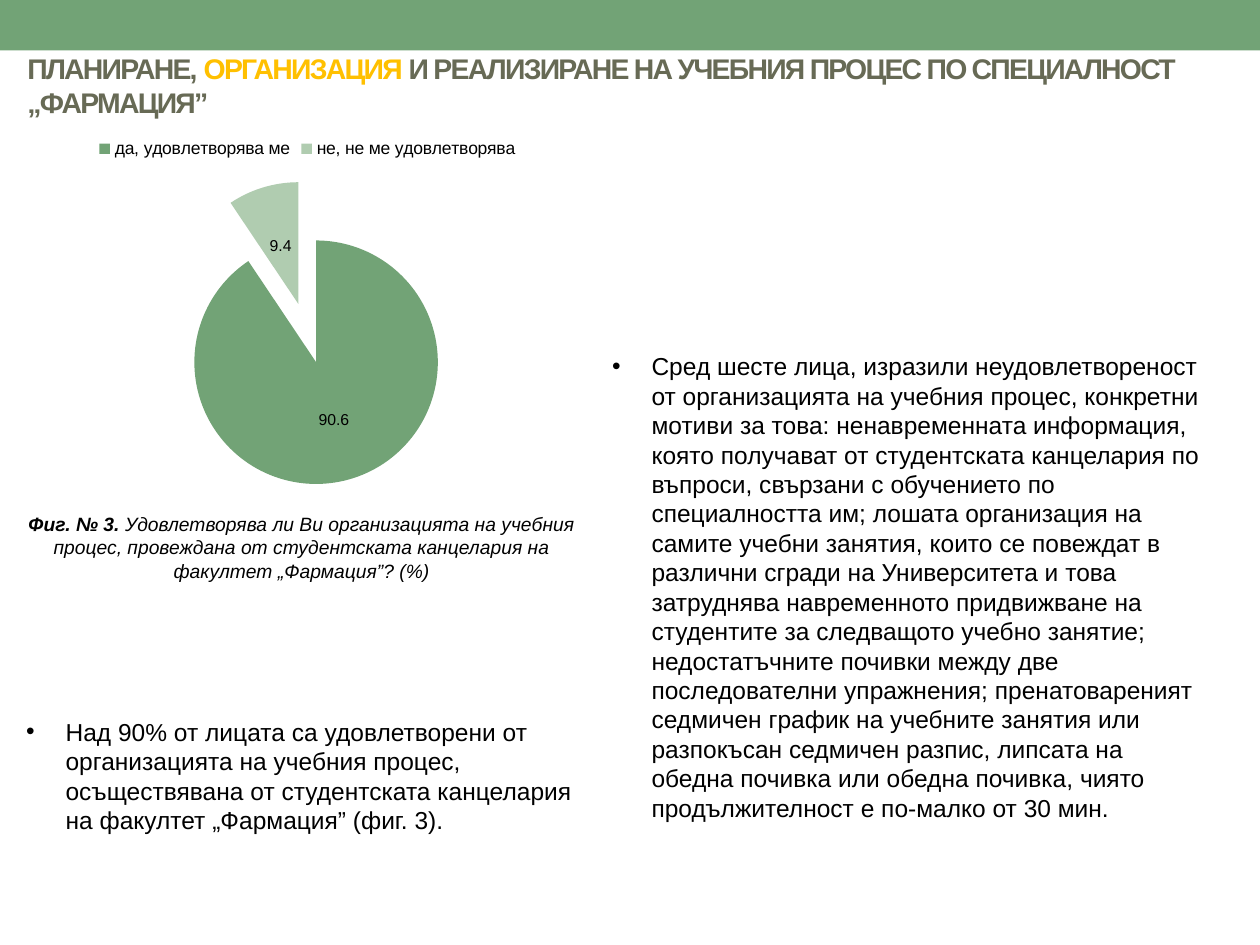
from dataclasses import dataclass

from lxml import etree
from pptx import Presentation
from pptx.chart.data import CategoryChartData
from pptx.dml.color import RGBColor
from pptx.enum.chart import XL_CHART_TYPE, XL_LABEL_POSITION, XL_LEGEND_POSITION
from pptx.enum.shapes import MSO_SHAPE
from pptx.enum.text import MSO_ANCHOR, PP_ALIGN
from pptx.oxml.ns import qn
from pptx.util import Pt

PIE = XL_CHART_TYPE.PIE
LABEL_CENTER = XL_LABEL_POSITION.CENTER
LEGEND_TOP = XL_LEGEND_POSITION.TOP
RECT = MSO_SHAPE.RECTANGLE
TOP, MIDDLE = MSO_ANCHOR.TOP, MSO_ANCHOR.MIDDLE
LEFT, CENTER = PP_ALIGN.LEFT, PP_ALIGN.CENTER


@dataclass(frozen=True)
class Theme:
    font: str = "Arial"
    green: str = "72A376"
    light_green: str = "B0CCB0"
    olive: str = "676A55"
    gold: str = "FFC000"
    black: str = "000000"
    title: float = 16.2
    body: float = 14
    caption: float = 11
    legend: float = 10
    label: float = 9


THEME = Theme()


def rgb(value):
    return RGBColor.from_string(value)


def style_font(font, size, color):
    font.name = THEME.font
    font.size = Pt(size)
    font.color.rgb = rgb(color)


def add_run(p, text, size=THEME.body, color=THEME.black, bold=False,
            italic=False, spacing=None):
    r = p.add_run()
    r.text = text
    style_font(r.font, size, color)
    r.font.bold = bold
    r.font.italic = italic
    if spacing is not None:
        r.font._element.set("spc", str(int(spacing * 100)))


class SlideBuilder:
    def __init__(self, slide, theme):
        self.s = slide
        self.theme = theme

    def bar(self, x, y, w, h, color):
        sp = self.s.shapes.add_shape(RECT, Pt(x), Pt(y), Pt(w), Pt(h))
        sp.shadow.inherit = False
        sp.fill.solid()
        sp.fill.fore_color.rgb = rgb(color)
        sp.line.fill.background()

    def text(self, x, y, w, h, runs, align=LEFT, anchor=TOP):
        """Add one paragraph; runs is a list of (text, format) pairs."""
        sp = self.s.shapes.add_textbox(Pt(x), Pt(y), Pt(w), Pt(h))
        tf = sp.text_frame
        tf.word_wrap = True
        tf.vertical_anchor = anchor
        p = tf.paragraphs[0]
        p.alignment = align
        for text, fmt in runs:
            add_run(p, text, **fmt)
        return p

    def bullet(self, x, y, w, h, text, indent=22.5):
        p = self.text(x, y, w, h, [(text, {})])
        pPr = p._p.get_or_add_pPr()
        pPr.set("marL", str(Pt(indent)))
        pPr.set("indent", str(-Pt(indent)))
        etree.SubElement(pPr, qn("a:buFont")).set("typeface", self.theme.font)
        etree.SubElement(pPr, qn("a:buChar")).set("char", "•")

    def pie(self, x, y, w, h, name, values, colors, explosion):
        data = CategoryChartData()
        data.categories = list(values)
        data.add_series(name, list(values.values()))
        chart = self.s.shapes.add_chart(
            PIE, Pt(x), Pt(y), Pt(w), Pt(h), data).chart
        style_font(chart.font, self.theme.legend, self.theme.black)
        chart.has_title = False
        chart.has_legend = True
        chart.legend.position = LEGEND_TOP
        chart.legend.include_in_layout = False
        style_font(chart.legend.font, self.theme.legend, self.theme.black)

        plot = chart.plots[0]
        plot.vary_by_categories = True
        series = plot.series[0]
        for i, color in enumerate(colors):
            fill = series.points[i].format.fill
            fill.solid()
            fill.fore_color.rgb = rgb(color)

        labels = series.data_labels
        labels.show_value = True
        labels.show_percentage = False
        labels.position = LABEL_CENTER
        style_font(labels.font, self.theme.label, self.theme.black)

        # Pull all slices away from the centre
        node = etree.Element(qn("c:explosion"), val=str(explosion))
        series._element.find(qn("c:dPt")).addprevious(node)


def main():
    prs = Presentation()
    prs.slide_width, prs.slide_height = Pt(720), Pt(540)
    t = THEME
    s = SlideBuilder(prs.slides.add_slide(prs.slide_layouts[6]), t)

    # Top band and title
    s.bar(0, 0, 720, 28.8, t.green)
    heading = dict(size=t.title, color=t.olive, bold=True, spacing=-1)
    s.text(8.6, 31.7, 697.7, 33.8, [
        ("ПЛАНИРАНЕ, ", heading),
        ("ОРГАНИЗАЦИЯ ", {**heading, "color": t.gold}),
        ("И РЕАЛИЗИРАНЕ НА УЧЕБНИЯ ПРОЦЕС ПО СПЕЦИАЛНОСТ „ФАРМАЦИЯ”", heading),
    ], anchor=MIDDLE)

    # Satisfaction chart with its caption
    s.pie(8.6, 71.3, 334, 216, "Удовлетвореност (%)",
          {"да, удовлетворява ме": 90.6, "не, не ме удовлетворява": 9.4},
          [t.green, t.light_green], explosion=25)
    caption = dict(size=t.caption, italic=True)
    s.text(8.6, 289.4, 327.6, 47.5, [
        ("Фиг. № 3. ", {**caption, "bold": True}),
        ("Удовлетворява ли Ви организацията на учебния процес, провеждана от "
         "студентската канцелария на факултет „Фармация”? (%)", caption),
    ], align=CENTER)

    # Findings
    s.bullet(7.9, 406, 329, 92.2,
             "Над 90% от лицата са удовлетворени от организацията на учебния "
             "процес, осъществявана от студентската канцелария на факултет "
             "„Фармация” (фиг. 3).")
    s.bullet(342.7, 197.3, 351.4, 278.6,
             "Сред шесте лица, изразили неудовлетвореност от организацията на "
             "учебния процес, конкретни мотиви за това: ненавременната "
             "информация, която получават от студентската канцелария по "
             "въпроси, свързани с обучението по специалността им; лошата "
             "организация на самите учебни занятия, които се повеждат в "
             "различни сгради на Университета и това затруднява навременното "
             "придвижване на студентите за следващото учебно занятие; "
             "недостатъчните почивки между две последователни упражнения; "
             "пренатовареният седмичен график на учебните занятия или "
             "разпокъсан седмичен разпис, липсата на обедна почивка или обедна "
             "почивка, чиято продължителност е по-малко от 30 мин.")

    prs.save("out.pptx")


if __name__ == "__main__":
    main()
